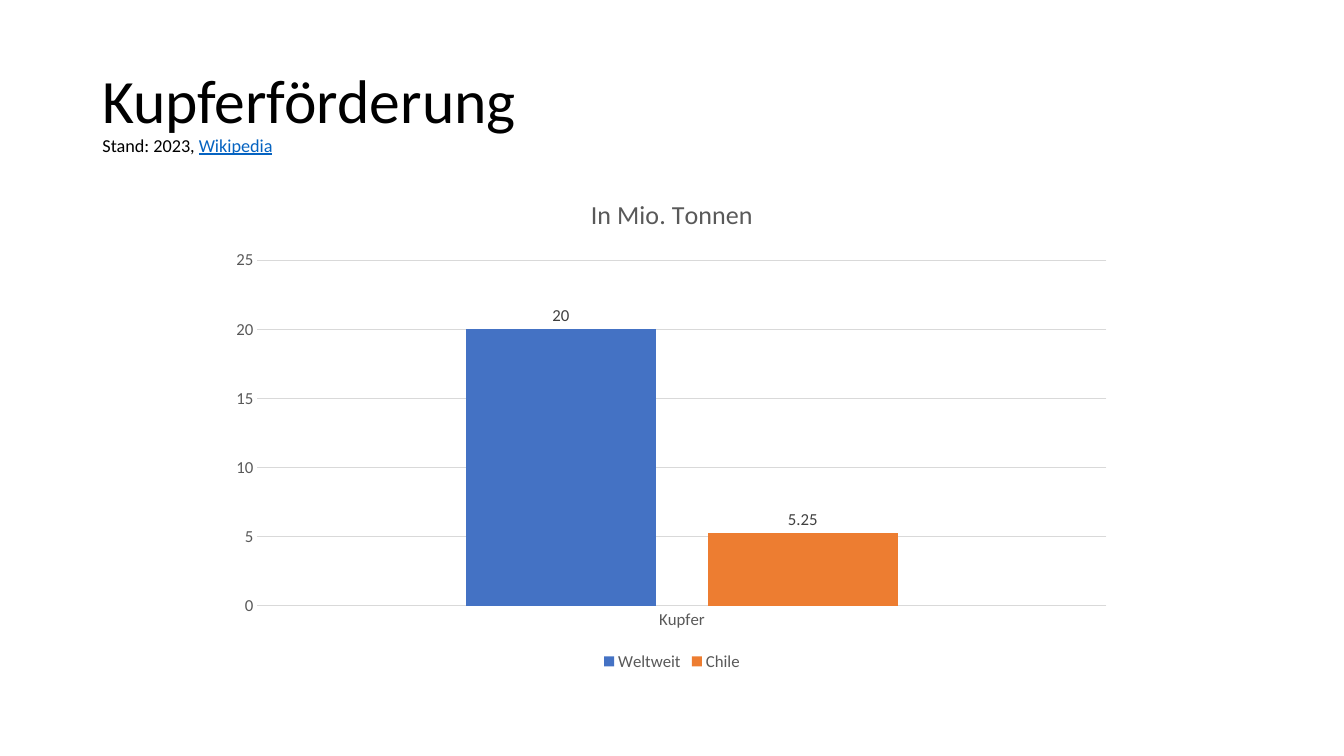
import pptx
import pptx.chart.data
import pptx.dml.color
import pptx.enum.chart
import pptx.enum.text
import pptx.oxml
import pptx.oxml.ns
import pptx.util

Pt = pptx.util.Pt
COLOURS = {
    "black": "000000",
    "link": "0563C1",
    "label": "404040",
    "axis": "595959",
    "grid": "D9D9D9",
    "Weltweit": "4472C4",
    "Chile": "ED7D31",
}
OUTPUT_VALUES = {"Weltweit": 20, "Chile": 5.25}


class SlideBuilder:
    def __init__(self, presentation, font_name):
        self.font_name = font_name
        self.slide = presentation.slides.add_slide(presentation.slide_layouts[5])

    def colour(self, name):
        return pptx.dml.color.RGBColor.from_string(COLOURS[name])

    def style_font(self, font, size, colour):
        font.name = self.font_name
        font.size = Pt(size)
        font.bold = False
        font.color.rgb = self.colour(colour)

    def style_line(self, line):
        line.color.rgb = self.colour("grid")
        line.width = Pt(0.75)

    def add_title(self, heading, note, source):
        title = self.slide.shapes.title
        title.left, title.top = Pt(66), Pt(28.8)
        title.width, title.height = Pt(828), Pt(104.4)
        frame = title.text_frame
        frame.word_wrap = True
        frame.auto_size = pptx.enum.text.MSO_AUTO_SIZE.NONE
        frame.vertical_anchor = pptx.enum.text.MSO_ANCHOR.MIDDLE
        paragraph = frame.paragraphs[0]
        paragraph.alignment = pptx.enum.text.PP_ALIGN.LEFT
        paragraph.line_spacing = 0.9
        for text, size, colour in (
            (heading, 44, "black"),
            (note, 13, "black"),
            (source, 13, "link"),
        ):
            run = paragraph.add_run()
            run.text = text
            self.style_font(run.font, size, colour)
            if text == heading:
                paragraph.add_line_break()
        run.font.underline = True

    def add_column_chart(self, title, category, values):
        data = pptx.chart.data.CategoryChartData()
        data.categories = [category]
        for name, value in values.items():
            data.add_series(name, [value])
        chart = self.slide.shapes.add_chart(
            pptx.enum.chart.XL_CHART_TYPE.COLUMN_CLUSTERED,
            Pt(156), Pt(126), Pt(648), Pt(356.4), data,
        ).chart
        self.style_font(chart.font, 12, "axis")

        chart.has_title = True
        chart.chart_title.include_in_layout = False
        paragraph = chart.chart_title.text_frame.paragraphs[0]
        paragraph.text = title
        self.style_font(paragraph.font, 18.6, "axis")

        chart.has_legend = True
        chart.legend.position = pptx.enum.chart.XL_LEGEND_POSITION.BOTTOM
        chart.legend.include_in_layout = False
        self.style_font(chart.legend.font, 12, "axis")

        for axis in (chart.category_axis, chart.value_axis):
            axis.major_tick_mark = pptx.enum.chart.XL_TICK_MARK.NONE
            axis.minor_tick_mark = pptx.enum.chart.XL_TICK_MARK.NONE
            self.style_font(axis.tick_labels.font, 12, "axis")
        self.style_line(chart.category_axis.format.line)
        value_axis = chart.value_axis
        value_axis.format.line.fill.background()
        value_axis.minimum_scale, value_axis.maximum_scale = 0, 25
        value_axis.major_unit = 5
        self.style_line(value_axis.major_gridlines.format.line)

        plot = chart.plots[0]
        plot.gap_width, plot.overlap = 219, -27
        plot.vary_by_categories = False
        for series in plot.series:
            series.format.fill.solid()
            series.format.fill.fore_color.rgb = self.colour(series.name)
            labels = series.data_labels
            labels.show_value = True
            labels.position = pptx.enum.chart.XL_LABEL_POSITION.OUTSIDE_END
            self.style_font(labels.font, 12, "label")
        self.place_plot(chart, x=0.043, y=0.168, w=0.936, h=0.693)

    def place_plot(self, chart, **fractions):
        """Fix the inner plot area as fractions of the chart frame."""
        namespace = pptx.oxml.ns.nsdecls("c")
        modes = "".join(f'<c:{side}Mode val="edge"/>' for side in "xy")
        sizes = "".join(f'<c:{key} val="{value}"/>' for key, value in fractions.items())
        layout = pptx.oxml.parse_xml(
            f'<c:layout {namespace}><c:manualLayout><c:layoutTarget val="inner"/>'
            f"{modes}{sizes}</c:manualLayout></c:layout>"
        )
        plot_area = chart.element.find(".//" + pptx.oxml.ns.qn("c:plotArea"))
        for automatic in plot_area.findall(pptx.oxml.ns.qn("c:layout")):
            plot_area.remove(automatic)
        plot_area.insert(0, layout)


def main():
    presentation = pptx.Presentation()
    presentation.slide_width, presentation.slide_height = Pt(960), Pt(540)
    builder = SlideBuilder(presentation, "Calibri")
    builder.add_title("Kupferförderung", "Stand: 2023, ", "Wikipedia")
    builder.add_column_chart("In Mio. Tonnen", "Kupfer", OUTPUT_VALUES)
    presentation.save("out.pptx")


if __name__ == "__main__":
    main()
